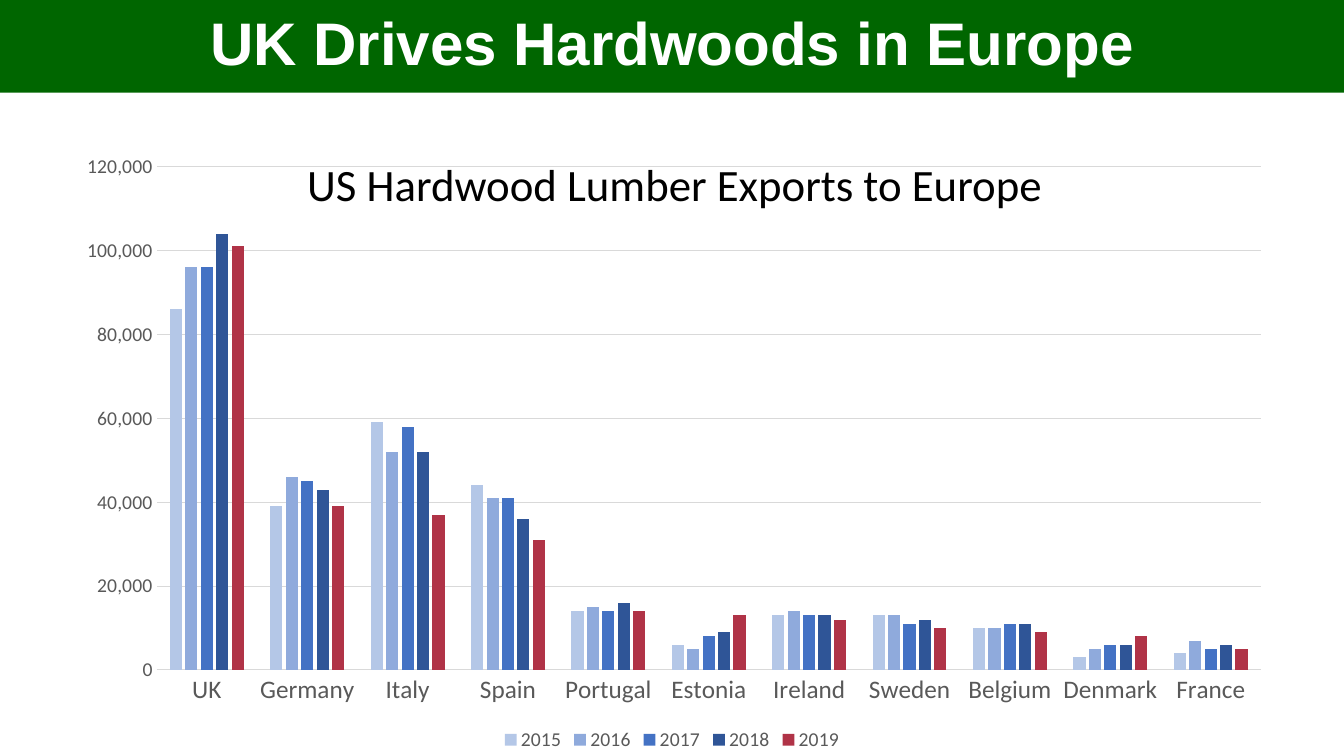
from lxml import etree
from pptx import Presentation
from pptx.chart.data import CategoryChartData
from pptx.dml.color import RGBColor
from pptx.enum.chart import XL_CHART_TYPE as ChartType, XL_LEGEND_POSITION as LegendPosition
from pptx.enum.chart import XL_TICK_MARK as TickMark
from pptx.enum.text import MSO_ANCHOR as Anchor, MSO_AUTO_SIZE as AutoSize, PP_ALIGN as Align
from pptx.oxml.ns import qn
from pptx.util import Inches, Pt

GREEN = RGBColor(0x00, 0x66, 0x00)
WHITE = RGBColor(0xFF, 0xFF, 0xFF)
BLACK = RGBColor(0x00, 0x00, 0x00)
GRAY = RGBColor(0x59, 0x59, 0x59)
GRID_GRAY = RGBColor(0xD9, 0xD9, 0xD9)

COUNTRIES = ["UK", "Germany", "Italy", "Spain", "Portugal", "Estonia",
             "Ireland", "Sweden", "Belgium", "Denmark", "France"]
EXPORTS_IN_THOUSANDS = {
    "2015": ([86, 39, 59, 44, 14, 6, 13, 13, 10, 3, 4], RGBColor(0xB4, 0xC7, 0xE7)),
    "2016": ([96, 46, 52, 41, 15, 5, 14, 13, 10, 5, 7], RGBColor(0x8F, 0xAA, 0xDC)),
    "2017": ([96, 45, 58, 41, 14, 8, 13, 11, 11, 6, 5], RGBColor(0x44, 0x72, 0xC4)),
    "2018": ([104, 43, 52, 36, 16, 9, 13, 12, 11, 6, 6], RGBColor(0x2F, 0x55, 0x97)),
    "2019": ([101, 39, 37, 31, 14, 13, 12, 10, 9, 8, 5], RGBColor(0xB0, 0x33, 0x47)),
}
PLOT_AREA = {"x": 0.08, "y": 0.04, "w": 0.9, "h": 0.82}


class SlideBuilder:
    heading_font = "Arial"
    body_font = "Calibri"

    def __init__(self, presentation):
        self.slide = presentation.slides.add_slide(presentation.slide_layouts[5])

    def style_font(self, font, name, size, color, bold=False):
        font.name = name
        font.size = Pt(size)
        font.bold = bold
        font.color.rgb = color

    def set_text(self, shape, text, name, size, color, bold=False):
        frame = shape.text_frame
        frame.word_wrap = True
        frame.auto_size = AutoSize.NONE
        frame.vertical_anchor = Anchor.MIDDLE
        paragraph = frame.paragraphs[0]
        paragraph.alignment = Align.CENTER
        paragraph.line_spacing = 0.9
        run = paragraph.add_run()
        run.text = text
        self.style_font(run.font, name, size, color, bold)

    def add_title(self, text, left, top, width, height):
        title = self.slide.shapes.title
        title.left, title.top = Inches(left), Inches(top)
        title.width, title.height = Inches(width), Inches(height)
        title.fill.solid()
        title.fill.fore_color.rgb = GREEN
        self.set_text(title, text, self.heading_font, 42.9, WHITE, bold=True)

    def add_caption(self, text, left, top, width, height):
        box = self.slide.shapes.add_textbox(
            Inches(left), Inches(top), Inches(width), Inches(height))
        self.set_text(box, text, self.body_font, 32, BLACK)

    def add_column_chart(self, categories, series_table, left, top, width, height):
        data = CategoryChartData(number_format="#,##0")
        data.categories = categories
        for year, (thousands, _) in series_table.items():
            data.add_series(year, [value * 1000 for value in thousands])
        chart = self.slide.shapes.add_chart(
            ChartType.COLUMN_CLUSTERED, Inches(left), Inches(top),
            Inches(width), Inches(height), data).chart
        chart.has_title = False
        self.style_font(chart.font, self.body_font, 10, BLACK)
        plot = chart.plots[0]
        plot.gap_width = 219
        plot.overlap = -27
        plot.vary_by_categories = False
        for series, (_, color) in zip(plot.series, series_table.values()):
            series.format.fill.solid()
            series.format.fill.fore_color.rgb = color
        self.style_axes(chart)
        chart.has_legend = True
        chart.legend.position = LegendPosition.BOTTOM
        chart.legend.include_in_layout = False
        self.style_font(chart.legend.font, self.body_font, 14, GRAY)
        self.place_plot_area(chart)

    def style_axes(self, chart):
        for axis, size in ((chart.category_axis, 18), (chart.value_axis, 14)):
            axis.major_tick_mark = axis.minor_tick_mark = TickMark.NONE
            self.style_font(axis.tick_labels.font, self.body_font, size, GRAY)
        value_axis = chart.value_axis
        value_axis.minimum_scale = 0
        value_axis.maximum_scale = 120000
        value_axis.major_unit = 20000
        value_axis.tick_labels.number_format = "#,##0"
        value_axis.tick_labels.number_format_is_linked = False
        value_axis.format.line.fill.background()
        value_axis.has_major_gridlines = True
        for line in (chart.category_axis.format.line, value_axis.major_gridlines.format.line):
            line.color.rgb = GRID_GRAY
            line.width = Pt(0.75)

    def place_plot_area(self, chart):
        plot_area = chart.plots[0]._element.getparent()
        layout = plot_area.find(qn("c:layout"))
        if layout is None:
            layout = etree.Element(qn("c:layout"))
            plot_area.insert(0, layout)
        manual = etree.SubElement(layout, qn("c:manualLayout"))
        settings = {"layoutTarget": "inner", "xMode": "edge", "yMode": "edge", **PLOT_AREA}
        for tag, value in settings.items():
            etree.SubElement(manual, qn(f"c:{tag}")).set("val", str(value))


def main():
    presentation = Presentation()
    presentation.slide_width = Inches(13.33)
    presentation.slide_height = Inches(7.5)
    builder = SlideBuilder(presentation)
    builder.add_title("UK Drives Hardwoods in Europe", 0, 0, 13.33, 0.92)
    builder.add_column_chart(COUNTRIES, EXPORTS_IN_THOUSANDS, 0.58, 1.41, 12.17, 6.09)
    builder.add_caption("US Hardwood Lumber Exports to Europe", 0.03, 1.41, 13.33, 0.88)
    presentation.save("out.pptx")


if __name__ == "__main__":
    main()
